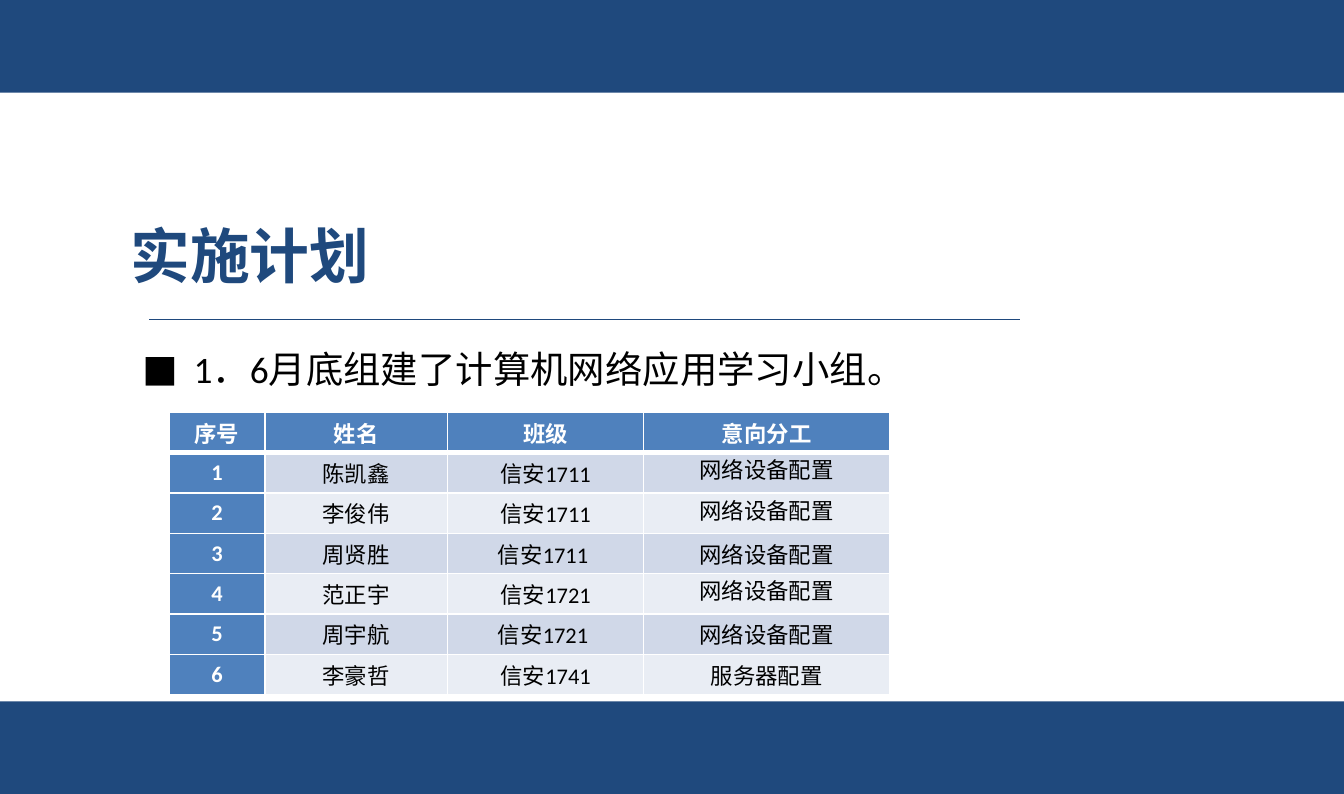
from lxml.etree import SubElement
from pptx import Presentation
from pptx.dml.color import RGBColor
from pptx.enum.shapes import MSO_CONNECTOR, MSO_SHAPE
from pptx.enum.text import MSO_ANCHOR, MSO_AUTO_SIZE, PP_ALIGN
from pptx.oxml.ns import qn
from pptx.util import Inches, Pt

COLORS = {"navy": "1F497D", "blue": "4F81BD", "band": "D0D8E8",
          "light": "E9EDF4", "white": "FFFFFF", "black": "000000"}
CJK_FONT = "Noto Sans CJK SC"
WIDTH, HEIGHT, BAR_HEIGHT = 10, 5.91, 0.69
COLUMN_WIDTHS = [0.71, 1.36, 1.46, 1.83]
ROW_HEIGHT = 0.3
MEMBERS = [
    ("序号", "姓名", "班级", "意向分工"),
    ("1", "陈凯鑫", "信安1711", "网络设备配置"),
    ("2", "李俊伟", "信安1711", "网络设备配置"),
    ("3", "周贤胜", "信安1711 ", "网络设备配置"),
    ("4", "范正宇", "信安1721", "网络设备配置"),
    ("5", "周宇航", "信安1721 ", "网络设备配置"),
    ("6", "李豪哲", "信安1741", "服务器配置"),
]
TOP_ANCHORED_DUTIES = {1, 2, 4}


def rgb(name):
    return RGBColor.from_string(COLORS[name])


def apply(target, formats):
    for attribute, value in formats.items():
        setattr(target, attribute, value)


def write(frame, text, color, size, font="Calibri", bold=False,
          align=PP_ALIGN.LEFT, spacing=1.0):
    paragraph = frame.paragraphs[0]
    apply(paragraph, {"alignment": align, "line_spacing": spacing,
                      "space_before": Pt(0)})
    run = paragraph.add_run()
    run.text = text
    apply(run.font, {"name": font, "size": Pt(size), "bold": bold})
    run.font.color.rgb = rgb(color)
    SubElement(run.font._element, qn("a:ea"), typeface=CJK_FONT)
    return paragraph


def place(placeholder, left, top, width, height, wrap):
    apply(placeholder, {"left": Inches(left), "top": Inches(top),
                        "width": Inches(width), "height": Inches(height)})
    apply(placeholder.text_frame, {"word_wrap": wrap,
                                   "auto_size": MSO_AUTO_SIZE.NONE,
                                   "vertical_anchor": MSO_ANCHOR.TOP})
    return placeholder.text_frame


def add_bar(slide, top):
    bar = slide.shapes.add_shape(MSO_SHAPE.RECTANGLE, 0, Inches(top),
                                 Inches(WIDTH), Inches(BAR_HEIGHT))
    bar.shadow.inherit = False
    bar.fill.solid()
    bar.fill.fore_color.rgb = rgb("navy")
    bar.line.fill.background()


def add_rule(slide, left, right, y):
    rule = slide.shapes.add_connector(MSO_CONNECTOR.STRAIGHT, Inches(left),
                                      Inches(y), Inches(right), Inches(y))
    rule.line.width = Pt(0.75)
    rule.line.color.rgb = rgb("navy")
    SubElement(rule._element.spPr, qn("a:effectLst"))


def add_bullet(paragraph, indent):
    properties = paragraph._p.get_or_add_pPr()
    properties.set("marL", str(Inches(indent)))
    properties.set("indent", str(-Inches(indent)))
    SubElement(properties, qn("a:buFont"), typeface="Calibri")
    SubElement(properties, qn("a:buChar"), char="■")


def set_borders(cell, **widths):
    properties = cell._tc.get_or_add_tcPr()
    for side in "LRTB":
        border = SubElement(properties, qn(f"a:ln{side}"),
                            w=str(Pt(widths.get(side, 1))))
        fill = SubElement(border, qn("a:solidFill"))
        SubElement(fill, qn("a:srgbClr"), val=COLORS["white"])


def format_cell(cell, text, row, column):
    heading = row == 0 or column == 0
    top_anchored = column == 3 and row in TOP_ANCHORED_DUTIES
    apply(cell, {
        "margin_left": Inches(0.07), "margin_right": Inches(0.07),
        "margin_top": 0, "margin_bottom": 0,
        "vertical_anchor": MSO_ANCHOR.TOP if top_anchored else MSO_ANCHOR.MIDDLE,
    })
    set_borders(cell, T=3 if row == 1 else 1, B=3 if row == 0 else 1)
    cell.fill.solid()
    body_fill = "band" if row % 2 else "light"
    cell.fill.fore_color.rgb = rgb("blue" if heading else body_fill)
    write(cell.text_frame, text, "white" if heading else "black", 12,
          bold=heading, align=PP_ALIGN.CENTER)


def add_member_table(slide, left, top):
    table = slide.shapes.add_table(
        len(MEMBERS), len(COLUMN_WIDTHS), Inches(left), Inches(top),
        Inches(sum(COLUMN_WIDTHS)), Inches(ROW_HEIGHT * len(MEMBERS))).table
    for column, width in zip(table.columns, COLUMN_WIDTHS):
        column.width = Inches(width)
    for r, member in enumerate(MEMBERS):
        table.rows[r].height = Inches(ROW_HEIGHT)
        for c, text in enumerate(member):
            format_cell(table.cell(r, c), text, r, c)


def main():
    presentation = Presentation()
    apply(presentation, {"slide_width": Inches(WIDTH),
                         "slide_height": Inches(HEIGHT)})
    slide = presentation.slides.add_slide(presentation.slide_layouts[1])
    for top in (0, HEIGHT - BAR_HEIGHT):
        add_bar(slide, top)
    title = place(slide.shapes.title, 0.87, 1.58, 2, 0.64, wrap=False)
    write(title, "实施计划", "navy", 32, font=CJK_FONT, bold=True)
    plan = place(slide.placeholders[1], 0.96, 2.36, 6.97, 0.61, wrap=True)
    step = write(plan, "1．6月底组建了计算机网络应用学习小组。", "black", 20,
                 spacing=1.5)
    add_bullet(step, 0.38)
    add_rule(slide, 1.11, 7.59, 2.38)
    add_member_table(slide, 1.26, 3.07)
    presentation.save("out.pptx")


if __name__ == "__main__":
    main()
